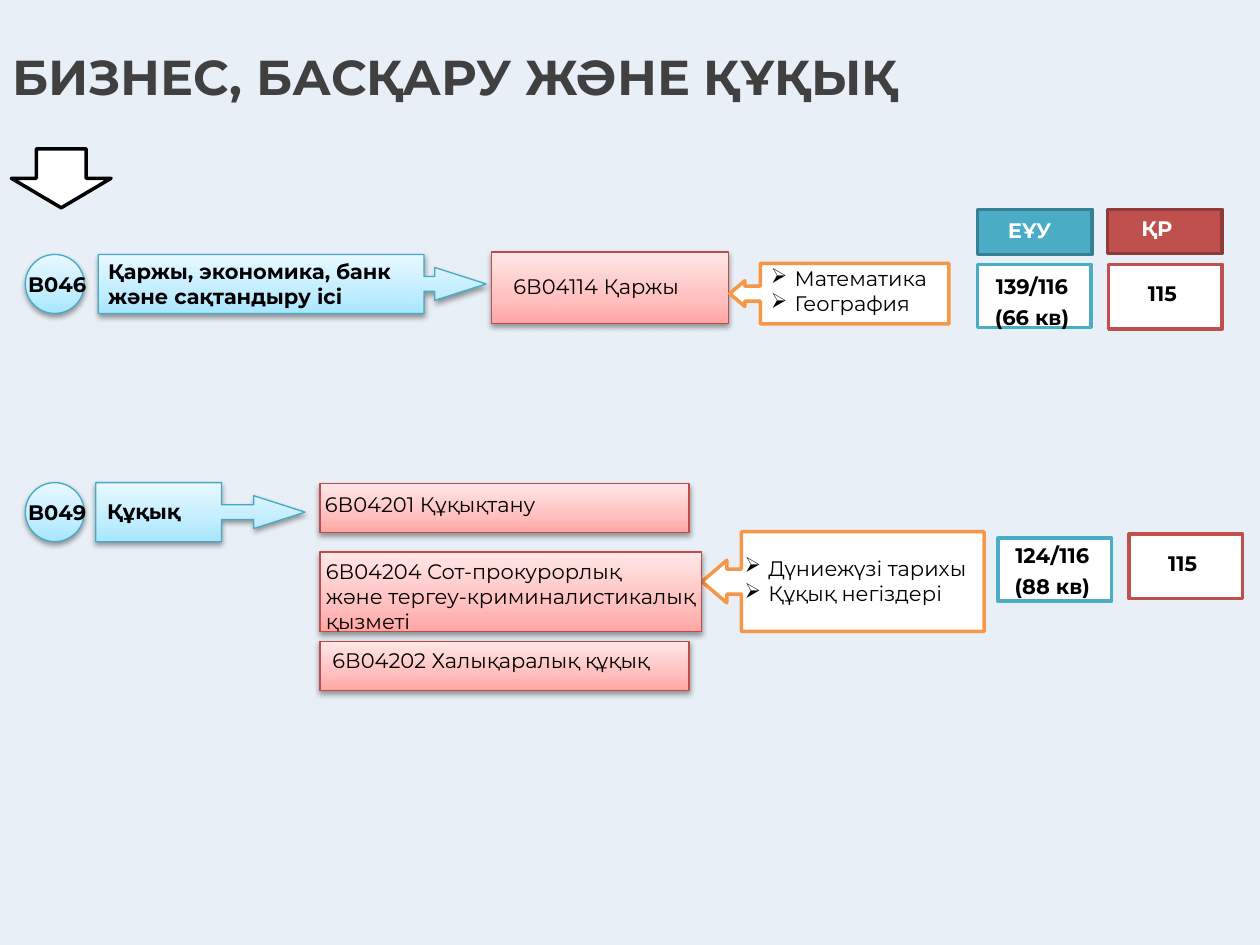
from dataclasses import dataclass
from typing import Optional

from lxml import etree
from pptx import Presentation
from pptx import util as u
from pptx.dml.color import RGBColor
from pptx.enum import shapes, text
from pptx.oxml import ns, parse_xml

FONT = "Montserrat"
COLORS = {
    "backdrop": "DCE6F2", "title": "404040", "black": "000000", "white": "FFFFFF",
    "orange": "F79646", "teal": "4BACC6", "teal_dark": "377F92",
    "red": "C0504D", "red_dark": "8E3B39", "blue_edge": "46AAC5", "pink_edge": "BF4C48",
}
GRADIENTS = {
    "blue": ("A7E6FF", "C1EDFF", "E7F8FF"),
    "pink": ("FFA6A5", "FFC0BF", "FFE7E7"),
}
KIND = shapes.MSO_SHAPE
Box = tuple[float, float, float, float]


@dataclass(frozen=True)
class Style:
    fill: str
    line: str
    weight: float = 2
    gradient: bool = False


@dataclass(frozen=True)
class Label:
    box: Box
    lines: tuple[str, ...]
    bold: bool = False
    color: str = "black"
    bullets: bool = False
    centred: bool = False


@dataclass(frozen=True)
class Panel:
    kind: KIND
    box: Box
    style: Style
    label: Optional[Label] = None
    adjustments: tuple[float, ...] = ()


BLUE = Style("blue", "blue_edge", 0.75, True)
PINK = Style("pink", "pink_edge", 0.75, True)
SUBJECTS = Style("white", "orange")
SUBJECT_ARROW = (0.25, 0.213, 0.25, 0.86)


def rgb(name: str) -> RGBColor:
    return RGBColor.from_string(COLORS[name])


def apply_gradient(shape, name: str) -> None:
    stops = "".join(
        f'<a:gs pos="{position}"><a:srgbClr val="{color}"/></a:gs>'
        for position, color in zip((0, 35000, 100000), GRADIENTS[name])
    )
    shape.fill.gradient()
    shape.fill.gradient_angle = 90
    stop_list = shape._element.spPr.find(".//" + ns.qn("a:gsLst"))
    stop_list.getparent().replace(
        stop_list, parse_xml(f'<a:gsLst {ns.nsdecls("a")}>{stops}</a:gsLst>'))


def apply_shadow(shape) -> None:
    effects = shape._element.spPr.find(ns.qn("a:effectLst"))
    effects.append(parse_xml(
        f'<a:outerShdw {ns.nsdecls("a")} blurRad="40000" dist="20000" dir="5400000" '
        'rotWithShape="0"><a:srgbClr val="000000"><a:alpha val="38000"/>'
        '</a:srgbClr></a:outerShdw>'))


def add_run(paragraph, wording: str, size: float, color: str, bold: bool) -> None:
    run = paragraph.add_run()
    run.text = wording
    run.font.name = FONT
    run.font.size = u.Pt(size)
    run.font.bold = bold
    run.font.color.rgb = rgb(color)


def add_label(slide, label: Label) -> None:
    frame = slide.shapes.add_textbox(*map(u.Cm, label.box)).text_frame
    frame.word_wrap = True
    for index, line in enumerate(label.lines):
        paragraph = frame.add_paragraph() if index else frame.paragraphs[0]
        add_run(paragraph, line, 12, label.color, label.bold)
        if label.centred:
            paragraph.alignment = text.PP_ALIGN.CENTER
            paragraph.line_spacing = 1.15
            paragraph.space_after = u.Pt(1)
        if label.bullets:
            properties = paragraph._p.get_or_add_pPr()
            properties.set("marL", str(u.Cm(0.48)))
            properties.set("indent", str(u.Cm(-0.48)))
            etree.SubElement(properties, ns.qn("a:buChar")).set("char", "➢")


def add_panel(slide, panel: Panel) -> None:
    shape = slide.shapes.add_shape(panel.kind, *map(u.Cm, panel.box))
    shape.shadow.inherit = False
    for index, value in enumerate(panel.adjustments):
        shape.adjustments[index] = value
    if panel.style.gradient:
        apply_gradient(shape, panel.style.fill)
        apply_shadow(shape)
    else:
        shape.fill.solid()
        shape.fill.fore_color.rgb = rgb(panel.style.fill)
    shape.line.color.rgb = rgb(panel.style.line)
    shape.line.width = u.Pt(panel.style.weight)
    if panel.label:
        add_label(slide, panel.label)


def group_code(code: str, top: float) -> Panel:
    return Panel(KIND.OVAL, (0.51, top, 1.19, 1.19), BLUE,
                 Label((0.32, top + 0.21, 1.8, 0.76), (code,), bold=True))


def scores(left: float, top: float, label_top: float, grant: tuple[str, ...]) -> Panel:
    return Panel(KIND.RECTANGLE, (left, top, 2.29, 1.27), Style("white", "teal"),
                 Label((left - 0.05, label_top, 2.29, 1.42), grant, bold=True, centred=True))


def threshold(left: float, top: float) -> Panel:
    return Panel(KIND.RECTANGLE, (left, top, 2.29, 1.3), Style("white", "red"),
                 Label((left + 0.54, top + 0.2, 2.01, 0.76), ("115",), bold=True))


PANELS = (
    Panel(KIND.DOWN_ARROW, (0.23, 3, 2.01, 1.19), Style("white", "black")),
    Panel(KIND.RIGHT_ARROW_CALLOUT, (1.98, 5.13, 7.82, 1.19), BLUE,
          Label((1.93, 5.08, 6.96, 1.27),
                ("Қаржы, экономика, банк", "және сақтандыру ісі"), bold=True),
          (0.25, 0.278, 0.868, 0.84)),
    Panel(KIND.RECTANGLE, (9.91, 5.08, 4.78, 1.45), PINK,
          Label((10.1, 5.38, 4.5, 0.76), ("6В04114 Қаржы",))),
    group_code("B046", 5.13),
    Panel(KIND.LEFT_ARROW_CALLOUT, (14.71, 5.31, 4.42, 1.22), SUBJECTS,
          Label((15.29, 5.23, 5.51, 1.27), ("Математика", "География"), bullets=True),
          SUBJECT_ARROW),
    scores(19.71, 5.33, 5.31, ("139/116", "(66 кв)")),
    threshold(22.35, 5.33),
    Panel(KIND.RIGHT_ARROW_CALLOUT, (1.93, 9.73, 4.22, 1.19), BLUE,
          Label((1.91, 9.93, 2.36, 0.76), ("Құқық",), bold=True),
          (0.25, 0.278, 0.868, 0.601)),
    group_code("B049", 9.73),
    Panel(KIND.RECTANGLE, (6.45, 12.93, 7.44, 0.99), PINK,
          Label((6.45, 12.93, 7.06, 0.76), ("6В04202 Халықаралық құқық",))),
    Panel(KIND.LEFT_ARROW_CALLOUT, (14.15, 10.72, 5.69, 2.01), SUBJECTS,
          Label((14.76, 11.07, 5.51, 1.27), ("Дүниежүзі тарихы", "Құқық негіздері"),
                bullets=True),
          SUBJECT_ARROW),
    Panel(KIND.RECTANGLE, (6.45, 9.75, 7.44, 0.99), PINK,
          Label((6.3, 9.78, 5.99, 0.76), ("6В04201 Құқықтану",))),
    Panel(KIND.RECTANGLE, (6.45, 11.13, 7.7, 1.6), PINK,
          Label((6.32, 11.13, 8.03, 1.8),
                ("6В04204 Сот-прокурорлық", "және тергеу-криминалистикалық қызметі"))),
    scores(20.12, 10.85, 10.74, ("124/116", "(88 кв)")),
    threshold(22.76, 10.77),
    Panel(KIND.RECTANGLE, (22.33, 4.22, 2.31, 0.89), Style("red", "red_dark"),
          Label((22.76, 4.22, 1.96, 0.76), ("ҚР",), bold=True, color="white")),
    Panel(KIND.RECTANGLE, (19.71, 4.22, 2.31, 0.91), Style("teal", "teal_dark"),
          Label((20.07, 4.27, 1.83, 0.76), ("ЕҰУ",), bold=True, color="white")),
)


def add_backdrop(slide, width: int, height: int) -> None:
    backdrop = slide.shapes.add_shape(KIND.RECTANGLE, 0, 0, width, height)
    backdrop.shadow.inherit = False
    backdrop.fill.solid()
    backdrop.fill.fore_color.rgb = rgb("backdrop")
    backdrop.line.fill.background()
    tint = backdrop._element.spPr.find(".//" + ns.qn("a:srgbClr"))
    etree.SubElement(tint, ns.qn("a:alpha")).set("val", "63000")


def format_title(slide, wording: str) -> None:
    title = slide.shapes.title
    title.left, title.top, title.width, title.height = map(u.Cm, (0, 0.05, 25.4, 2.97))
    title.text_frame.vertical_anchor = text.MSO_ANCHOR.MIDDLE
    heading = title.text_frame.paragraphs[0]
    heading.alignment = text.PP_ALIGN.LEFT
    add_run(heading, wording, 28, "title", True)
    slide.shapes._spTree.append(title._element)


def main() -> None:
    deck = Presentation()
    deck.slide_width, deck.slide_height = u.Cm(25.4), u.Cm(19.05)
    slide = deck.slides.add_slide(deck.slide_layouts[5])
    add_backdrop(slide, deck.slide_width, deck.slide_height)
    format_title(slide, "БИЗНЕС, БАСҚАРУ ЖӘНЕ ҚҰҚЫҚ")
    for panel in PANELS:
        add_panel(slide, panel)
    deck.save("out.pptx")


if __name__ == "__main__":
    main()
